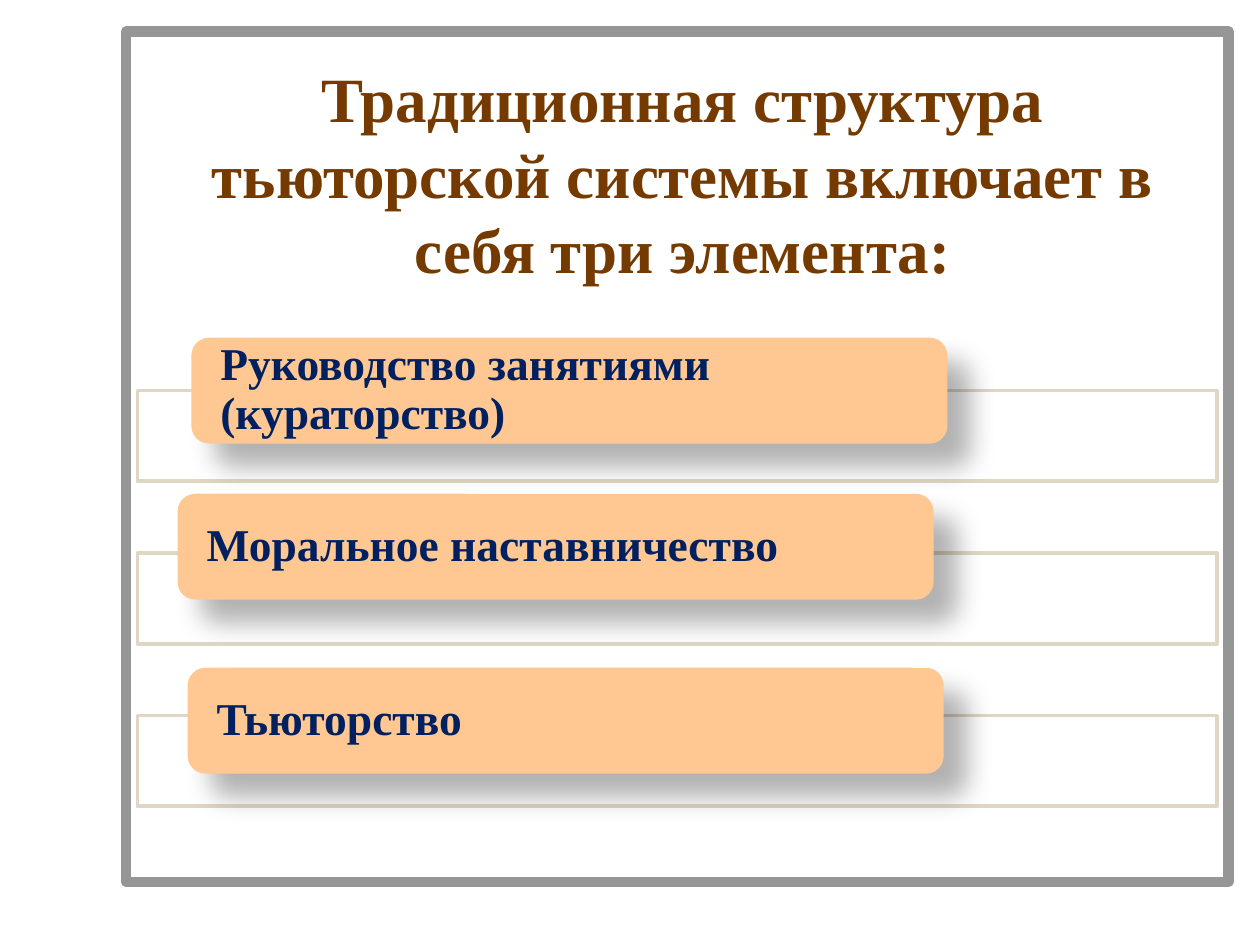
from lxml import etree
from pptx import Presentation
from pptx.dml.color import RGBColor
from pptx.enum import shapes, text
from pptx.oxml.ns import qn
from pptx.util import Pt

FONT = "Times New Roman"
TITLE = "Традиционная структура тьюторской системы включает в себя три элемента:"
# Label, left and top of each card
CARDS = [
    ("Руководство занятиями (кураторство)", 109.4, 193),
    ("Моральное наставничество", 101.5, 282.2),
    ("Тьюторство", 107.3, 381.6),
]
ROW_TOP, ROW_STEP = 223.2, 92.88


def color(code):
    return RGBColor.from_string(code)


def write(shape, words, size, ink, align, anchor, pad, top=0, gap=None):
    frame = shape.text_frame
    frame.word_wrap = True
    frame.auto_size = text.MSO_AUTO_SIZE.NONE
    frame.vertical_anchor = anchor
    frame.margin_left = frame.margin_right = Pt(pad)
    frame.margin_top, frame.margin_bottom = Pt(top), Pt(0)
    para = frame.paragraphs[0]
    para.alignment = align
    if gap:
        para.line_spacing = gap
    run = para.add_run()
    run.text = words
    run.font.name, run.font.size, run.font.bold = FONT, Pt(size), True
    run.font.color.rgb = color(ink)


def box(slide, kind, area, fill, line=None, width=0):
    shape = slide.shapes.add_shape(kind, *map(Pt, area))
    shape.shadow.inherit = False
    shape.fill.solid()
    shape.fill.fore_color.rgb = color(fill)
    if line:
        shape.line.color.rgb = color(line)
        shape.line.width = Pt(width)
    else:
        shape.line.fill.background()
    return shape


def alpha(node, share):
    etree.SubElement(node, qn("a:alpha"), val=str(share * 1000))


def shade(shape):
    """Cast a soft shadow down and to the right."""
    effects = shape._element.spPr.find(qn("a:effectLst"))
    outer = etree.SubElement(effects, qn("a:outerShdw"), blurRad=str(Pt(15)),
                             dist=str(Pt(18)), dir="2700000", rotWithShape="0")
    alpha(etree.SubElement(outer, qn("a:srgbClr"), val="000000"), 30)


def row(slide, top):
    bar = box(slide, shapes.MSO_SHAPE.RECTANGLE, (78.5, top, 617, 51.8),
              "FFFFFF", "DFD6C3", 2)
    alpha(bar._element.spPr.find(qn("a:solidFill"))[0], 90)


def card(slide, words, left, top):
    shape = box(slide, shapes.MSO_SHAPE.ROUNDED_RECTANGLE,
                (left, top, 432, 60.5), "FFC892")
    shade(shape)
    write(shape, words, 26, "002060", text.PP_ALIGN.LEFT,
          text.MSO_ANCHOR.MIDDLE, 13.6, gap=0.9)


def head(slide):
    title = slide.shapes.title
    title.left, title.top = Pt(84), Pt(30)
    title.width, title.height = Pt(612), Pt(90)
    write(title, TITLE, 36, "743A00", text.PP_ALIGN.CENTER,
          text.MSO_ANCHOR.TOP, 7.2, top=4)


def main():
    deck = Presentation()
    deck.slide_width, deck.slide_height = Pt(720), Pt(540)
    slide = deck.slides.add_slide(deck.slide_layouts[5])

    # Frame, placed behind the title
    frame = box(slide, shapes.MSO_SHAPE.RECTANGLE, (72, 18, 630, 486),
                "FFFFFF", "969696", 6)
    slide.shapes.title._element.addprevious(frame._element)
    head(slide)

    # Rows with their cards
    for i, (words, left, top) in enumerate(CARDS):
        row(slide, ROW_TOP + i * ROW_STEP)
        card(slide, words, left, top)

    deck.save("out.pptx")


if __name__ == "__main__":
    main()
